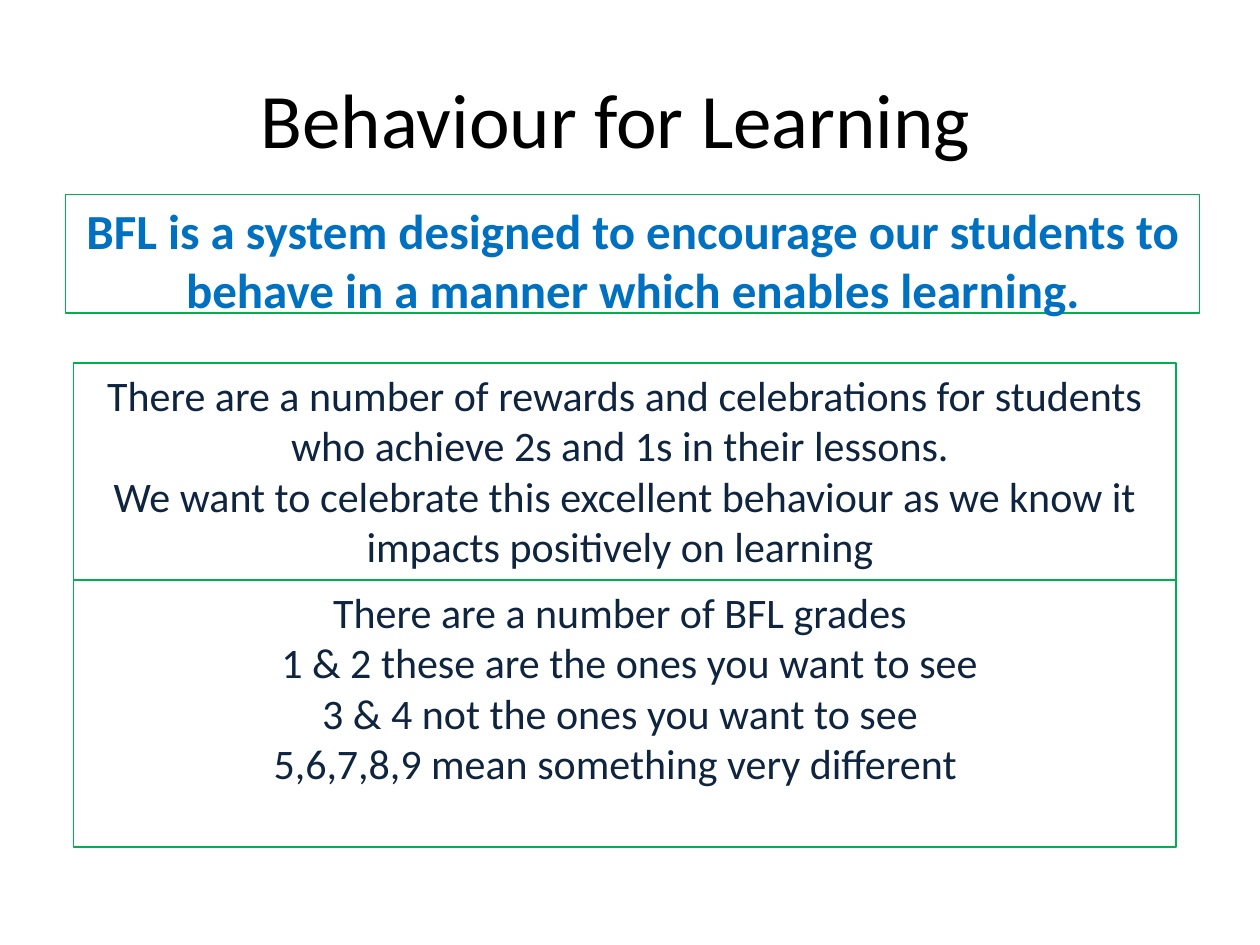
from dataclasses import dataclass

from lxml import etree
from pptx import Presentation
from pptx.dml.color import RGBColor
from pptx.enum import shapes, text
from pptx.oxml.ns import qn
from pptx.util import Pt


@dataclass(frozen=True)
class Theme:
    face: str = "Calibri"
    black: str = "000000"
    blue: str = "0070C0"
    navy: str = "0F243E"
    green: str = "00B050"
    head: int = 44
    lead: int = 28
    note: int = 24
    rule: float = 0.75


T = Theme()
TITLE = "Behaviour for Learning "
LEAD = ("BFL is a system designed to encourage our students to "
        "behave in a manner which enables learning.")
PRAISE = [
    "There are a number of rewards and celebrations for students "
    "who achieve 2s and 1s in their lessons. ",
    "We want to celebrate this excellent behaviour as we know it "
    "impacts positively on learning ",
]
GRADES = [
    "There are a number of BFL grades ",
    " 1 & 2 these are the ones you want to see",
    "3 & 4 not the ones you want to see ",
    "5,6,7,8,9 mean something very different  ",
]


def place(shape, box):
    names = ("left", "top", "width", "height")
    for name, size in zip(names, box):
        setattr(shape, name, Pt(size))


def write(shape, lines, size, color, bold=False, plain=False):
    """Fill a shape with centred paragraphs of one style."""
    frame = shape.text_frame
    frame.word_wrap = True
    for i, line in enumerate(lines):
        para = frame.paragraphs[0] if i == 0 else frame.add_paragraph()
        para.alignment = text.PP_ALIGN.CENTER
        if plain:
            # Drop the list bullet and its indent
            props = para._p.get_or_add_pPr()
            props.set("marL", "0")
            props.set("indent", "0")
            para.space_before = Pt(0)
            etree.SubElement(props, qn("a:buNone"))
        run = para.add_run()
        run.text = line
        style = {"name": T.face, "size": Pt(size), "bold": bold}
        for key, value in style.items():
            setattr(run.font, key, value)
        run.font.color.rgb = RGBColor.from_string(color)


def frame_box(shape):
    """Give a shape a thin green outline and top-anchored text."""
    shape.fill.background()
    shape.line.color.rgb = RGBColor.from_string(T.green)
    shape.line.width = Pt(T.rule)
    style = {
        "auto_size": text.MSO_AUTO_SIZE.SHAPE_TO_FIT_TEXT,
        "vertical_anchor": text.MSO_ANCHOR.TOP,
    }
    for key, value in style.items():
        setattr(shape.text_frame, key, value)


def add_title(slide, box):
    title = slide.shapes.title
    place(title, box)
    title.text_frame.vertical_anchor = text.MSO_ANCHOR.MIDDLE
    write(title, [TITLE], T.head, T.black)


def add_lead(slide, box):
    body = slide.placeholders[1]
    place(body, box)
    frame_box(body)
    write(body, [LEAD], T.lead, T.blue, bold=True, plain=True)


def add_notes(slide, box):
    """Stack the two note boxes, the first one 124 points high."""
    left, top, width, height = box
    split = 124
    parts = [(PRAISE, top, split), (GRADES, top + split, height - split)]
    for lines, y, tall in parts:
        note = slide.shapes.add_shape(
            shapes.MSO_SHAPE.RECTANGLE, Pt(left), Pt(y), Pt(width), Pt(tall))
        note.shadow.inherit = False
        frame_box(note)
        write(note, lines, T.note, T.navy)


def main():
    deck = Presentation()
    deck.slide_width, deck.slide_height = Pt(720), Pt(540)
    slide = deck.slides.add_slide(deck.slide_layouts[1])
    # Heading, summary and notes
    add_title(slide, (33, 22.5, 648, 90))
    add_lead(slide, (37.5, 111, 648, 75))
    add_notes(slide, (42, 207.5, 630, 276.5))
    deck.save("out.pptx")


if __name__ == "__main__":
    main()
